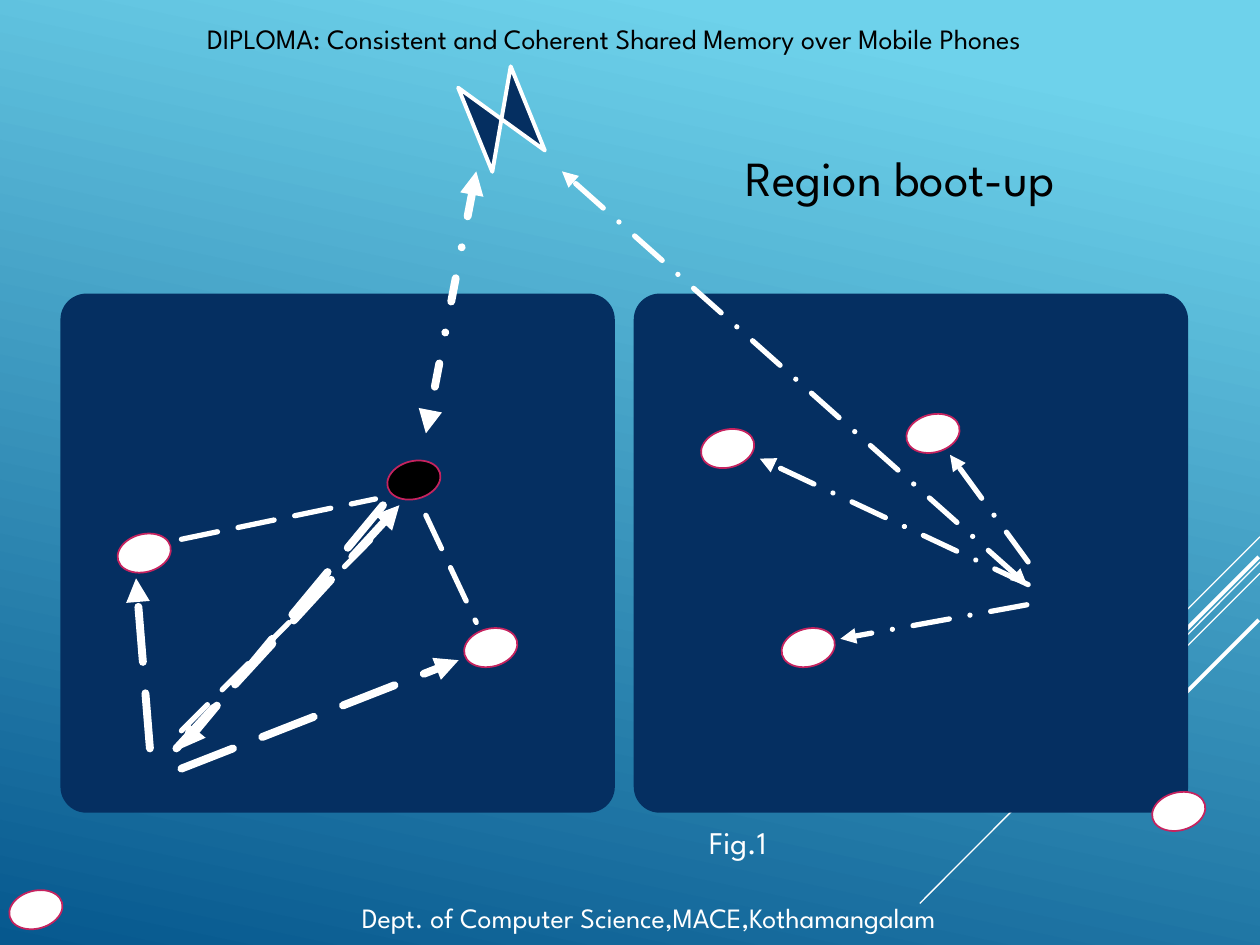
from dataclasses import dataclass
from typing import Any, Optional

from lxml.etree import SubElement
from pptx import Presentation
from pptx.dml.color import RGBColor
from pptx.enum.dml import MSO_LINE
from pptx.enum.shapes import MSO_CONNECTOR, MSO_SHAPE
from pptx.enum.text import PP_ALIGN
from pptx.oxml.ns import qn
from pptx.util import Inches, Pt

COLORS = {
    "sky": "6ED2EB",
    "deep": "06588E",
    "navy": "052F61",
    "white": "FFFFFF",
    "black": "000000",
    "rose": "C6235F",
}
FONT = "League Spartan"
TILT = 344.8


@dataclass
class Link:
    start: tuple[float, float]
    end: tuple[float, float]
    width: float
    dash: Optional[MSO_LINE] = None
    tips: tuple[str, ...] = ()


@dataclass
class Node:
    left: float
    top: float
    color: str = "white"


@dataclass
class Label:
    text: str
    box: tuple[float, float, float, float]
    size: int
    color: str
    align: PP_ALIGN = PP_ALIGN.LEFT


LONG, DOT, MIXED = MSO_LINE.LONG_DASH, MSO_LINE.DASH_DOT, MSO_LINE.LONG_DASH_DOT
TAIL, BOTH = ("tailEnd",), ("headEnd", "tailEnd")

STREAKS = [
    Link((10, 4.26), (9.17, 5.09), 0.75),
    Link((10, 4.46), (7.3, 7.17), 0.75),
    Link((10, 4.55), (8.28, 6.27), 0.75),
    Link((9.99, 4.42), (8.42, 5.99), 2.25),
    Link((9.99, 4.92), (8.85, 6.06), 2.25),
]
LINKS = [
    Link((1.19, 5.94), (1.08, 4.59), 4.5, LONG, TAIL),
    Link((1.4, 5.94), (3.17, 4.01), 4.5, LONG, TAIL),
    Link((1.44, 6.1), (3.64, 5.24), 4.5, LONG, TAIL),
    Link((3.04, 4.01), (1.44, 5.94), 4.5, LONG, TAIL),
    Link((1.44, 4.28), (2.98, 3.96), 3, LONG),
    Link((3.38, 4.09), (3.78, 4.94), 3, LONG),
    Link((1.44, 5.8), (3.04, 4.19), 3, LONG),
    Link((3.78, 1.36), (3.38, 3.44), 4.5, DOT, BOTH),
    Link((8.16, 4.46), (7.54, 3.61), 3, MIXED, TAIL),
    Link((8.16, 4.64), (6.03, 3.64), 3, MIXED, TAIL),
    Link((8.15, 4.8), (6.67, 5.07), 3, MIXED, TAIL),
    Link((8.15, 4.64), (4.46, 1.36), 3, MIXED, BOTH),
]
NODES = [
    Node(0.07, 7.07),
    Node(6.2, 4.99),
    Node(3.68, 4.99),
    Node(0.93, 4.24),
    Node(3.07, 3.66, "black"),
    Node(5.56, 3.41),
    Node(7.19, 3.29),
    Node(9.14, 6.29),
]
LABELS = [
    Label("DIPLOMA: Consistent and Coherent Shared Memory over Mobile Phones",
          (-0.52, 0.12, 10.79, 0.37), 16, "black", PP_ALIGN.CENTER),
    Label("Dept. of Computer Science,MACE,Kothamangalam",
          (-0.23, 7.1, 10.76, 0.37), 16, "white", PP_ALIGN.CENTER),
    Label("Fig.1", (5.53, 6.48, 2.63, 0.4), 18, "white"),
    Label("Region boot-up", (5.82, 1.12, 4.03, 0.57), 28, "black"),
]


def tint(name: str) -> RGBColor:
    """Return the named colour."""
    return RGBColor.from_string(COLORS[name])


def apply(target: Any, values: dict[str, Any]) -> None:
    """Set each format value on the target."""
    for name, value in values.items():
        setattr(target, name, value)


def paint(slide: Any) -> None:
    """Fill the slide with the sky gradient."""
    fill = slide.background.fill
    fill.gradient()
    fill.gradient_angle = 360 - 102
    for stop, name, place in zip(fill.gradient_stops, ("sky", "deep"), (0.1, 1)):
        stop.color.rgb = tint(name)
        stop.position = place


def draw_shape(slide: Any, kind: MSO_SHAPE, box: tuple[float, ...], color: str,
               edge: Optional[str] = None, width: float = 1, turn: float = 0) -> Any:
    """Draw one flat shape."""
    shape = slide.shapes.add_shape(kind, *map(Inches, box))
    shape.shadow.inherit = False
    shape.rotation = turn
    shape.fill.solid()
    shape.fill.fore_color.rgb = tint(color)
    if edge:
        shape.line.color.rgb = tint(edge)
        shape.line.width = Pt(width)
    else:
        shape.line.fill.background()
    return shape


def draw_link(slide: Any, link: Link) -> None:
    """Draw a white line with its dash and arrowheads."""
    wire = slide.shapes.add_connector(
        MSO_CONNECTOR.STRAIGHT, *map(Inches, link.start + link.end))
    wire.line.color.rgb = tint("white")
    apply(wire.line, {"width": Pt(link.width), "dash_style": link.dash})
    props = wire._element.spPr
    line = props.find(qn("a:ln"))
    if link.dash:
        line.set("cap", "rnd")
    for tip in link.tips:
        SubElement(line, qn(f"a:{tip}")).set("type", "triangle")
    SubElement(props, qn("a:effectLst"))


def draw_label(slide: Any, label: Label) -> None:
    """Draw one line of text."""
    frame = slide.shapes.add_textbox(*map(Inches, label.box)).text_frame
    frame.word_wrap = True
    para = frame.paragraphs[0]
    para.alignment = label.align
    run = para.add_run()
    run.text = label.text
    apply(run.font, {"name": FONT, "size": Pt(label.size)})
    run.font.color.rgb = tint(label.color)


def main() -> None:
    """Build and save the slide."""
    deck = Presentation()
    apply(deck, {"slide_width": Inches(10), "slide_height": Inches(7.5)})
    slide = deck.slides.add_slide(deck.slide_layouts[6])
    paint(slide)
    for streak in STREAKS:
        draw_link(slide, streak)
    for left in (0.48, 5.03):
        panel = draw_shape(slide, MSO_SHAPE.ROUNDED_RECTANGLE, (left, 2.33, 4.4, 4.12), "navy")
        panel.adjustments[0] = 0.05
    for node in NODES:
        draw_shape(slide, MSO_SHAPE.OVAL, (node.left, node.top, 0.43, 0.3),
                   node.color, "rose", turn=TILT)
    draw_shape(slide, MSO_SHAPE.FLOWCHART_COLLATE, (3.62, 0.72, 0.72, 0.45),
               "navy", "white", 2.25, 247.9)
    for link in LINKS:
        draw_link(slide, link)
    for label in LABELS:
        draw_label(slide, label)
    deck.save("out.pptx")


if __name__ == "__main__":
    main()
